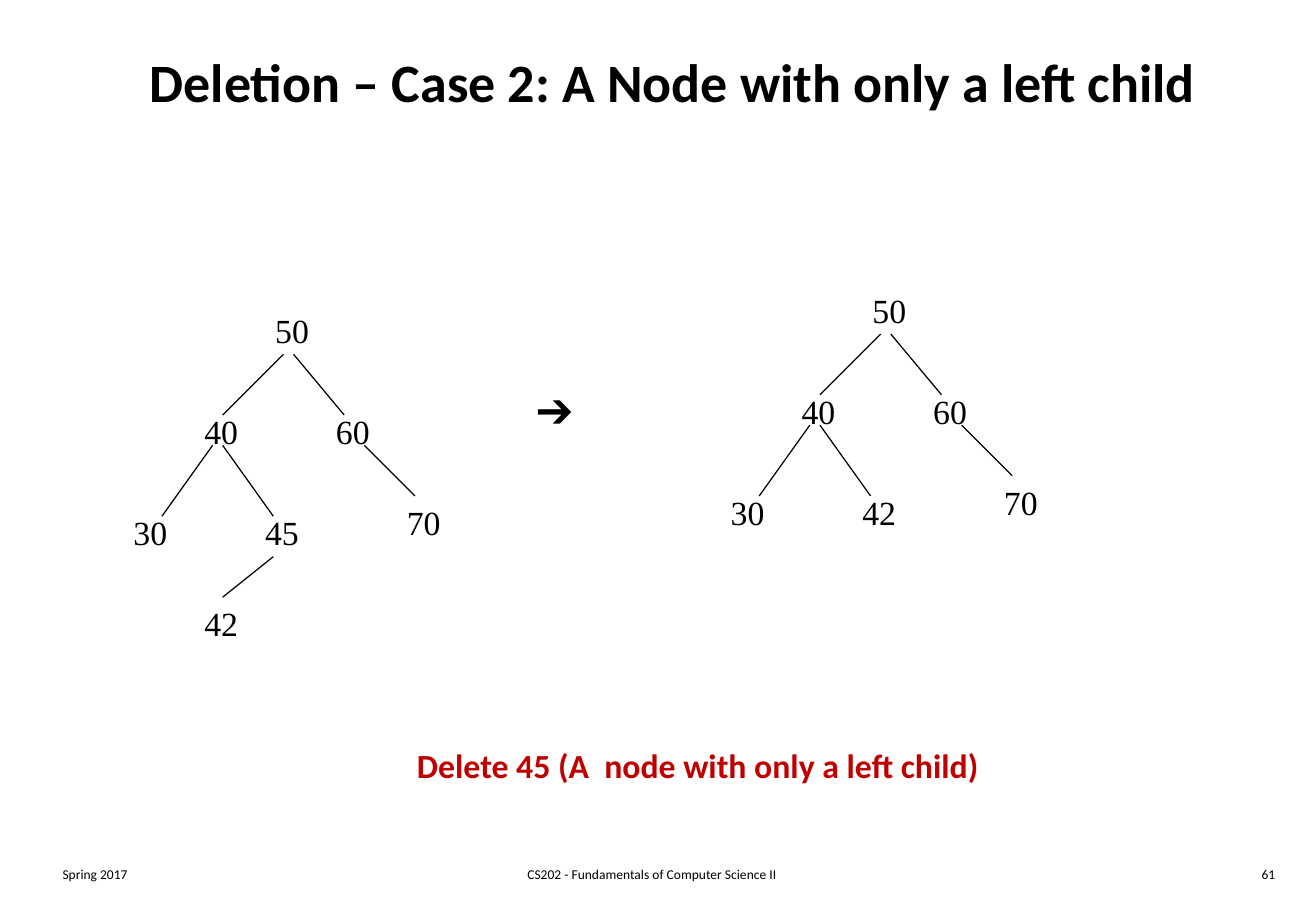
from pptx import Presentation
from pptx.dml.color import RGBColor
from pptx.enum.shapes import MSO_CONNECTOR
from pptx.enum.text import MSO_ANCHOR as Anchor, PP_ALIGN as Align
from pptx.oxml.ns import qn
from pptx.util import Pt
from lxml.etree import SubElement

COLORS = {"ink": "000000", "accent": "C00000"}
SANS, SERIF = "Calibri", "Times New Roman"

TITLE = "Deletion – Case 2: A Node with only a left child"
CAPTION = "Delete 45 (A  node with only a left child)"
ARROW = "➔"

# text, left, width, alignment
FOOTERS = [
    ("Spring 2017", 30, 163, Align.LEFT),
    ("CS202 - Fundamentals of Computer Science II", 240.5, 292, Align.CENTER),
    ("61", 600, 163, Align.RIGHT),
]

# Offsets from the tree's top left corner: label position, then the branch
# from the parent as start and end points.
POSITIONS = {
    "root": ((84, 0), None),
    "left": ((42, 60), ((96, 30), (60, 66))),
    "right": ((120, 60), ((102, 30), (132, 66))),
    "left-left": ((0, 120), ((54, 84), (24, 126))),
    "left-right": ((78, 120), ((60, 84), (90, 126))),
    "right-right": ((162, 114), ((144, 84), (174, 114))),
    "left-right-left": ((42, 174), ((90, 150), (60, 174))),
}

SHARED_KEYS = {"root": "50", "left": "40", "right": "60",
               "left-left": "30", "right-right": "70"}
TREES = [
    ((72, 180), SHARED_KEYS | {"left-right": "45", "left-right-left": "42"}),
    ((426, 168), SHARED_KEYS | {"left-right": "42"}),
]
KEY_SIZE = (34.5, 31)


def add_text(shapes, text, left, top, width, height, *, size, font=SANS,
             color="ink", bold=False, align=Align.LEFT, anchor=Anchor.TOP,
             wrap=False):
    box = shapes.add_textbox(Pt(left), Pt(top), Pt(width), Pt(height))
    frame = box.text_frame
    frame.word_wrap = wrap
    frame.vertical_anchor = anchor
    paragraph = frame.paragraphs[0]
    paragraph.alignment = align
    run = paragraph.add_run()
    run.text = text
    run.font.name = font
    run.font.size = Pt(size)
    run.font.bold = bold
    run.font.color.rgb = RGBColor.from_string(COLORS[color])


def add_branch(shapes, start, end):
    branch = shapes.add_connector(MSO_CONNECTOR.STRAIGHT,
                                  *(Pt(value) for value in (*start, *end)))
    branch.line.width = Pt(0.75)
    branch.line.color.rgb = RGBColor.from_string(COLORS["ink"])
    SubElement(branch._element.spPr, qn("a:effectLst"))


def add_tree(slide, origin, keys):
    def place(point):
        return origin[0] + point[0], origin[1] + point[1]

    tree = slide.shapes.add_group_shape().shapes
    for position, key in keys.items():
        label, branch = POSITIONS[position]
        if branch:
            add_branch(tree, *map(place, branch))
        add_text(tree, key, *place(label), *KEY_SIZE, size=20, font=SERIF)


def main():
    deck = Presentation()
    deck.slide_width, deck.slide_height = Pt(780), Pt(540)
    slide = deck.slides.add_slide(deck.slide_layouts[6])

    add_text(slide.shapes, TITLE, 30, 12, 738, 72, size=32, bold=True,
             align=Align.CENTER, anchor=Anchor.MIDDLE, wrap=True)
    for origin, keys in TREES:
        add_tree(slide, origin, keys)
    add_text(slide.shapes, ARROW, 311, 225.5, 40, 36, size=24, font=SERIF)
    add_text(slide.shapes, CAPTION, 240, 438, 350.5, 31.5, size=20,
             color="accent", bold=True)
    for text, left, width, align in FOOTERS:
        add_text(slide.shapes, text, left, 510, width, 18, size=8,
                 align=align, wrap=True)

    deck.save("out.pptx")


if __name__ == "__main__":
    main()
